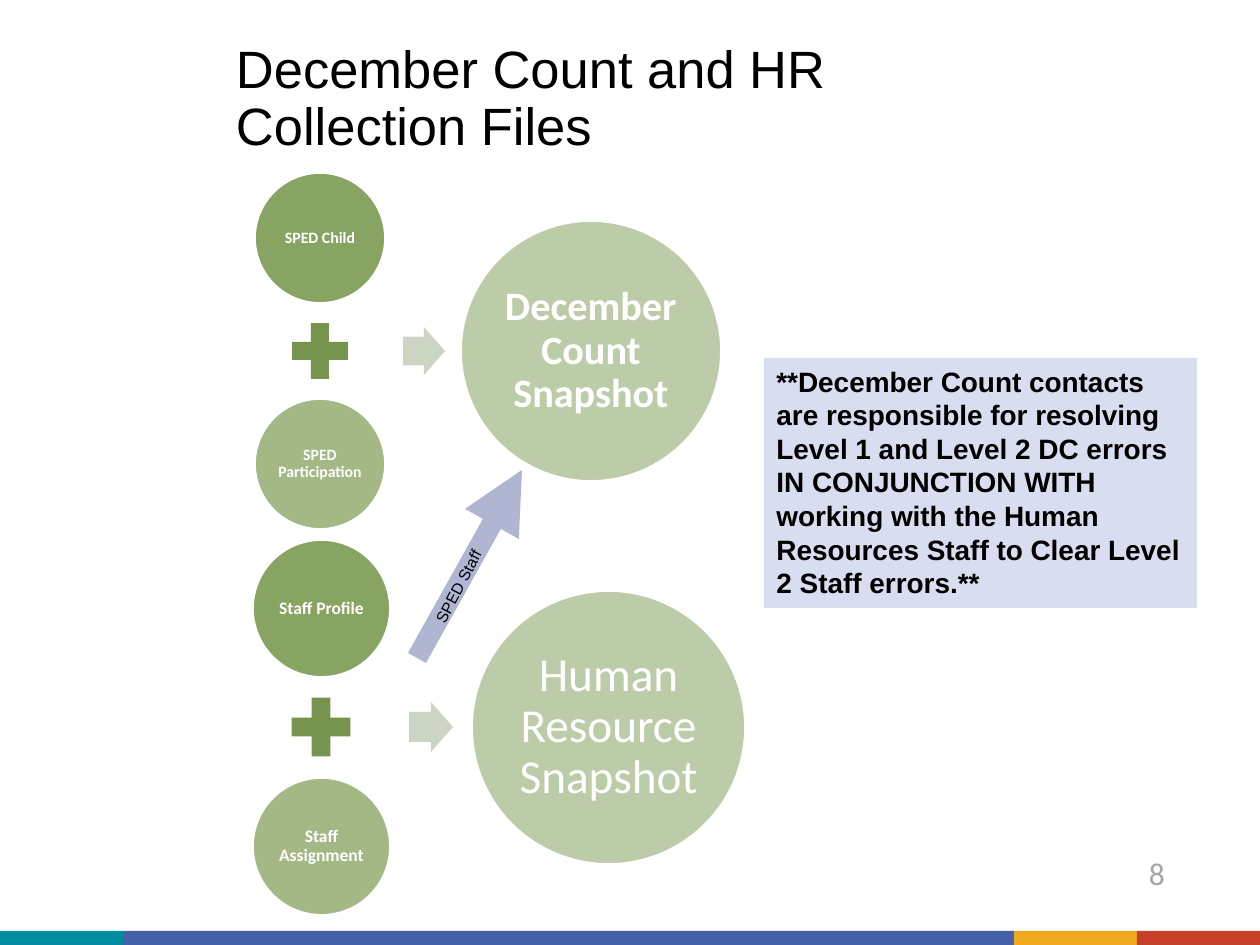
from dataclasses import dataclass

from lxml.etree import SubElement
from pptx import Presentation
from pptx.dml.color import RGBColor
from pptx.enum.shapes import MSO_CONNECTOR, MSO_SHAPE
from pptx.enum.text import MSO_ANCHOR, MSO_AUTO_SIZE, PP_ALIGN
from pptx.oxml.ns import qn
from pptx.util import Emu, Pt

PX = 914400 / 126
COLORS = {
    "teal": "008CA0", "blue": "455FA9", "gold": "EFAA1F", "red": "C63F28",
    "circle": "7C9B52", "plus": "76944E", "arrow": "CCD5C3",
    "staff": "B0B6D1", "callout": "D8DEEF",
    "white": "FFFFFF", "black": "000000", "gray": "A6A6A6",
}


@dataclass(frozen=True)
class Style:
    size: int
    font: str = "Calibri"
    color: str = "white"
    bold: bool = False
    align: PP_ALIGN = PP_ALIGN.LEFT
    spacing: float = 1.0
    anchor: MSO_ANCHOR = MSO_ANCHOR.TOP


@dataclass(frozen=True)
class Box:
    left: int
    top: int
    width: int
    height: int

    def emu(self) -> list[Emu]:
        return [px(v) for v in (self.left, self.top, self.width, self.height)]


@dataclass(frozen=True)
class Flow:
    """Two files added together, leading to one snapshot."""
    files: tuple[str, str]
    snapshot: str
    center_x: int
    center_y: int
    file_size: int
    file_offset: int
    plus_size: int
    arrow: Box
    snapshot_x: int
    snapshot_size: int
    file_points: int
    snapshot_points: int
    snapshot_bold: bool


FLOWS = [
    Flow(("SPED Child", "SPED Participation"), "December Count Snapshot",
         320, 351, 130, 113, 76, Box(403, 327, 42, 48), 591, 260, 9, 23, True),
    Flow(("Staff Profile", "Staff Assignment"), "Human Resource Snapshot",
         321, 727, 137, 119, 80, Box(409, 702, 44, 50), 608, 273, 10, 27, False),
]
FOOTER = [("teal", 123), ("blue", 891), ("gold", 123), ("red", 123)]


def px(value: float) -> Emu:
    return Emu(round(value * PX))


def rgb(name: str) -> RGBColor:
    return RGBColor.from_string(COLORS[name])


def square(center_x: int, center_y: int, size: int) -> Box:
    return Box(center_x - size // 2, center_y - size // 2, size, size)


def write(shape, text: str, style: Style, inset: int | None = None) -> None:
    frame = shape.text_frame
    frame.word_wrap = True
    frame.auto_size = MSO_AUTO_SIZE.NONE
    frame.vertical_anchor = style.anchor
    if inset is not None:
        frame.margin_left = frame.margin_right = px(inset)
        frame.margin_top = frame.margin_bottom = px(inset)
    paragraph = frame.paragraphs[0]
    paragraph.text = text
    paragraph.alignment = style.align
    paragraph.line_spacing = style.spacing
    font = paragraph.font
    font.name, font.size, font.bold = style.font, Pt(style.size), style.bold
    font.color.rgb = rgb(style.color)


def add_filled(page, kind: MSO_SHAPE, box: Box, color: str):
    shape = page.shapes.add_shape(kind, *box.emu())
    shape.shadow.inherit = False
    shape.fill.solid()
    shape.fill.fore_color.rgb = rgb(color)
    shape.line.fill.background()
    return shape


def add_circle(page, box: Box, opacity: int, text: str, points: int,
               bold: bool, inset: int) -> None:
    circle = add_filled(page, MSO_SHAPE.OVAL, box, "circle")
    color = circle._element.spPr.find(qn("a:solidFill"))[0]
    SubElement(color, qn("a:alpha"), val=str(opacity * 1000))
    circle.line.color.rgb = rgb("white")
    circle.line.width = Pt(1)
    write(circle, text, Style(points, bold=bold, align=PP_ALIGN.CENTER,
                              spacing=0.9, anchor=MSO_ANCHOR.MIDDLE), inset)


def add_flow(page, flow: Flow) -> None:
    for text, side, opacity in zip(flow.files, (-1, 1), (90, 70)):
        box = square(flow.center_x, flow.center_y + side * flow.file_offset,
                     flow.file_size)
        add_circle(page, box, opacity, text, flow.file_points, True, 1)
    add_filled(page, MSO_SHAPE.MATH_PLUS,
               square(flow.center_x, flow.center_y, flow.plus_size), "plus")
    arrow = add_filled(page, MSO_SHAPE.RIGHT_ARROW, flow.arrow, "arrow")
    arrow.adjustments[0] = 0.6
    arrow.adjustments[1] = 0.5
    add_circle(page, square(flow.snapshot_x, flow.center_y, flow.snapshot_size),
               50, flow.snapshot, flow.snapshot_points, flow.snapshot_bold, 4)


def add_staff_arrow(page) -> None:
    line = page.shapes.add_connector(
        MSO_CONNECTOR.STRAIGHT, px(417), px(658), px(522), px(470))
    line.line.color.rgb = rgb("staff")
    line.line.width = Pt(11.75)
    SubElement(line.line._get_or_add_ln(), qn("a:tailEnd"), type="triangle")
    SubElement(line._element.spPr, qn("a:effectLst"))
    label = page.shapes.add_textbox(*Box(391, 546, 160, 31).emu())
    label.rotation = 297.8
    write(label, "SPED Staff", Style(9, "Arial", "black"))


def main() -> None:
    deck = Presentation()
    deck.slide_width, deck.slide_height = px(1260), px(945)
    page = deck.slides.add_slide(deck.slide_layouts[5])

    left = 0
    for color, width in FOOTER:
        add_filled(page, MSO_SHAPE.RECTANGLE, Box(left, 931, width, 14), color)
        left += width

    title = page.shapes.title
    title.left, title.top, title.width, title.height = Box(227, 48, 668, 118).emu()
    write(title, "December Count and HR Collection Files",
          Style(30, "Arial", "black", spacing=0.9, anchor=MSO_ANCHOR.BOTTOM), 9)

    for flow in FLOWS:
        add_flow(page, flow)
    add_staff_arrow(page)

    callout = add_filled(page, MSO_SHAPE.RECTANGLE, Box(764, 358, 433, 250), "callout")
    write(callout, "**December Count contacts are responsible for resolving "
          "Level 1 and Level 2 DC errors IN CONJUNCTION WITH working with the "
          "Human Resources Staff to Clear Level 2 Staff errors.**",
          Style(16, "Arial", "black", bold=True))

    number = page.shapes.add_textbox(*Box(1140, 845, 57, 43).emu())
    write(number, "8", Style(18, color="gray"), 9)
    deck.save("out.pptx")


if __name__ == "__main__":
    main()
